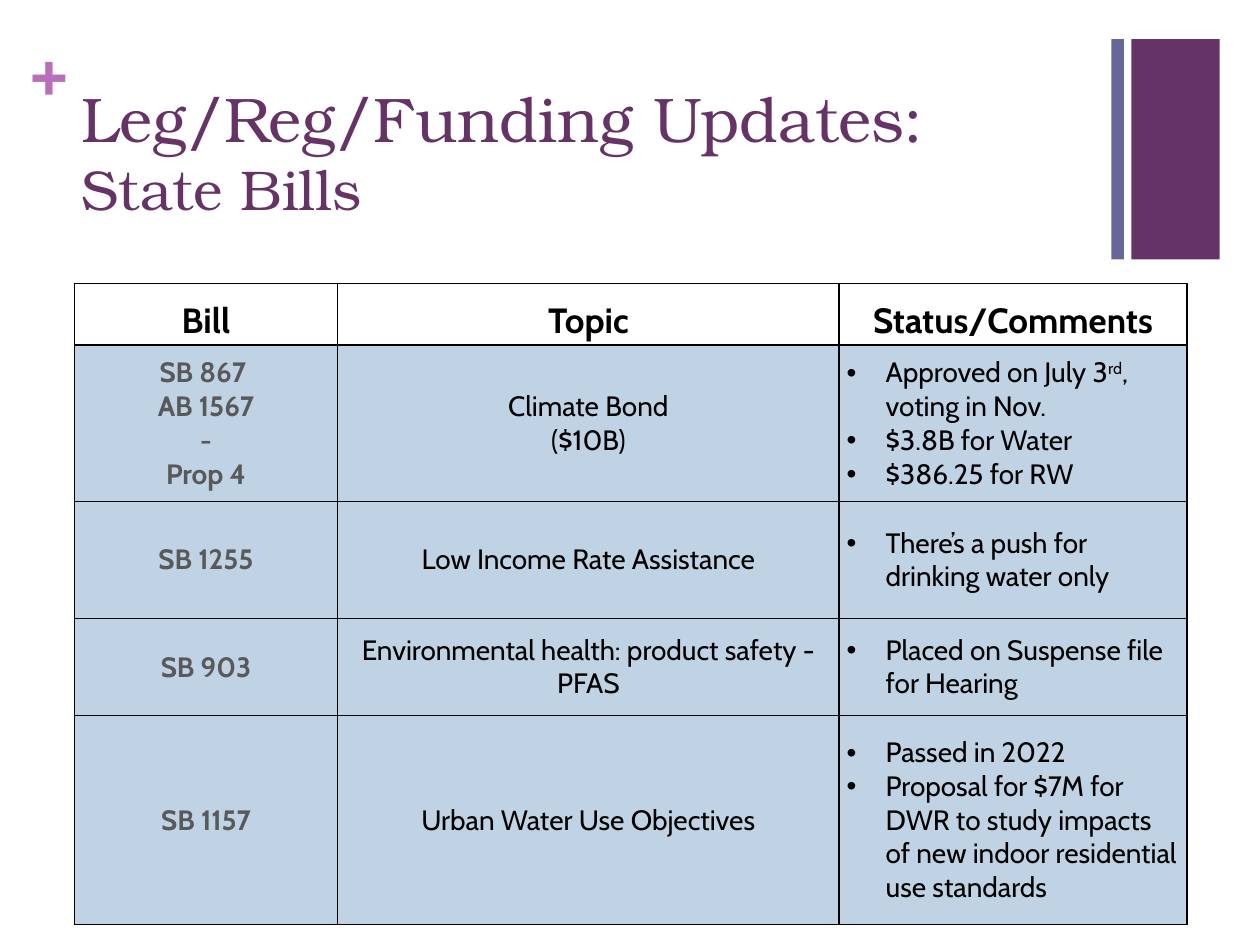
"""Build the state bills slide with its title, side bars and status table."""
import lxml.etree
import pptx
import pptx.dml.color
import pptx.enum.shapes
import pptx.enum.text
import pptx.oxml.ns
import pptx.util

Inches = pptx.util.Inches
Pt = pptx.util.Pt
RGBColor = pptx.dml.color.RGBColor
ALIGN = pptx.enum.text.PP_ALIGN
ANCHOR = pptx.enum.text.MSO_ANCHOR
qn = pptx.oxml.ns.qn

PURPLE = RGBColor(0x66, 0x33, 0x66)
SLATE = RGBColor(0x66, 0x66, 0x99)
ORCHID = RGBColor(0xB8, 0x6E, 0xB8)
PALE_BLUE = RGBColor(0xC0, 0xD3, 0xE4)
GRAY = RGBColor(0x59, 0x59, 0x59)
BLACK = RGBColor(0, 0, 0)
WHITE = RGBColor(0xFF, 0xFF, 0xFF)

HEADERS = ["Bill", "Topic", "Status/Comments"]
BILLS = [
    ("SB 867 \nAB 1567\n-\nProp 4", "Climate Bond\n($10B)",
     "Approved on July 3^rd^, voting in Nov.\n$3.8B for Water\n$386.25 for RW"),
    ("SB 1255", "Low Income Rate Assistance",
     "There’s a push for drinking water only"),
    ("SB 903", "Environmental health: product safety - PFAS",
     "Placed on Suspense file for Hearing"),
    ("SB 1157", "Urban Water Use Objectives",
     "Passed in 2022\nProposal for $7M for DWR to study impacts of new indoor "
     "residential use standards"),
]
COL_WIDTHS = [2.09, 3.98, 2.76]
ROW_HEIGHTS = [0.49, 1.24, 0.93, 0.77, 1.66]


class Deck:
    """Hold the fonts and the current slide."""

    heading_font = "TeX Gyre Bonum"
    body_font = "Cabin"

    def __init__(self, prs):
        self.s = prs.slides.add_slide(prs.slide_layouts[5])

    def style(self, r, font, size, color, bold=False):
        r.font.name = font
        r.font.size = Pt(size)
        r.font.bold = bold
        r.font.color.rgb = color

    def frame(self, tf, inset):
        tf.word_wrap = True
        tf.auto_size = pptx.enum.text.MSO_AUTO_SIZE.NONE
        tf.vertical_anchor = ANCHOR.TOP
        tf.margin_left = tf.margin_right = Inches(inset)
        tf.margin_top = tf.margin_bottom = Inches(inset)

    def title(self, text, box, sizes):
        sp = self.s.shapes.title
        sp.left, sp.top, sp.width, sp.height = map(Inches, box)
        tf = sp.text_frame
        tf.text = text
        self.frame(tf, 0.1)
        p = tf.paragraphs[0]
        p.alignment = ALIGN.LEFT
        for r, size in zip(p.runs, sizes):
            self.style(r, self.heading_font, size, PURPLE)

    def bar(self, box, color):
        sp = self.s.shapes.add_shape(
            pptx.enum.shapes.MSO_SHAPE.RECTANGLE, *map(Inches, box))
        sp.shadow.inherit = False
        sp.fill.solid()
        sp.fill.fore_color.rgb = color
        sp.line.fill.background()

    def label(self, text, box, size, color):
        tf = self.s.shapes.add_textbox(*map(Inches, box)).text_frame
        self.frame(tf, 0)
        tf.text = text
        self.style(tf.paragraphs[0].runs[0], self.heading_font, size, color, True)

    def table(self, left, top, widths, heights):
        tbl = self.s.shapes.add_table(
            len(heights), len(widths), Inches(left), Inches(top),
            Inches(sum(widths)), Inches(sum(heights))).table
        for col, width in zip(tbl.columns, widths):
            col.width = Inches(width)
        for row, height in zip(tbl.rows, heights):
            row.height = Inches(height)
        return tbl

    def cell(self, cell, text, size, color, fill, bold=False, header=False, bullets=False):
        cell.vertical_anchor = ANCHOR.BOTTOM if header else ANCHOR.MIDDLE
        cell.margin_left = cell.margin_right = Inches(0.04 if header else 0.06)
        cell.margin_top = cell.margin_bottom = Inches(0.02 if header else 0)
        self.borders(cell)
        cell.fill.solid()
        cell.fill.fore_color.rgb = fill
        tf = cell.text_frame
        tf.text = text
        for p in tf.paragraphs:
            p.alignment = ALIGN.LEFT if bullets else ALIGN.CENTER
            if bullets:
                self.bullet(p)
            self.superscript(p)
            for r in p.runs:
                self.style(r, self.body_font, size, color, bold)

    def borders(self, cell):
        tcPr = cell._tc.get_or_add_tcPr()
        for side in ("a:lnL", "a:lnR", "a:lnT", "a:lnB"):
            ln = lxml.etree.SubElement(tcPr, qn(side), w=str(Pt(1)))
            fill = lxml.etree.SubElement(ln, qn("a:solidFill"))
            lxml.etree.SubElement(fill, qn("a:srgbClr"), val=str(BLACK))

    def bullet(self, p):
        pPr = p._p.get_or_add_pPr()
        pPr.set("marL", str(Inches(0.31)))
        pPr.set("indent", str(-Inches(0.31)))
        lxml.etree.SubElement(pPr, qn("a:buFont"), typeface="Arial")
        lxml.etree.SubElement(pPr, qn("a:buChar"), char="•")

    def superscript(self, p):
        first, *rest = p.text.split("^")
        if rest:
            p.runs[0].text = first
        for i, part in enumerate(rest):
            r = p.add_run()
            r.text = part
            if i % 2 == 0:
                r._r.get_or_add_rPr().set("baseline", "30000")


def main():
    prs = pptx.Presentation()
    prs.slide_width, prs.slide_height = Inches(10), Inches(7.5)
    deck = Deck(prs)
    deck.bar((8.98, 0.31, 0.7, 1.75), PURPLE)
    deck.label("+", (0.24, 0.25, 0.29, 0.61), 36, ORCHID)
    deck.bar((8.82, 0.31, 0.1, 1.75), SLATE)
    deck.title("Leg/Reg/Funding Updates: \vState Bills", (0.55, 0.53, 8.26, 1.22), (36, 32))
    tbl = deck.table(0.59, 2.25, COL_WIDTHS, ROW_HEIGHTS)
    for j, text in enumerate(HEADERS):
        deck.cell(tbl.cell(0, j), text, 20, BLACK, WHITE, bold=True, header=True)
    for i, (bill, topic, status) in enumerate(BILLS, 1):
        deck.cell(tbl.cell(i, 0), bill, 16, GRAY, PALE_BLUE, bold=True)
        deck.cell(tbl.cell(i, 1), topic, 16, BLACK, PALE_BLUE)
        deck.cell(tbl.cell(i, 2), status, 16, BLACK, PALE_BLUE, bullets=True)
    prs.save("out.pptx")


if __name__ == "__main__":
    main()
